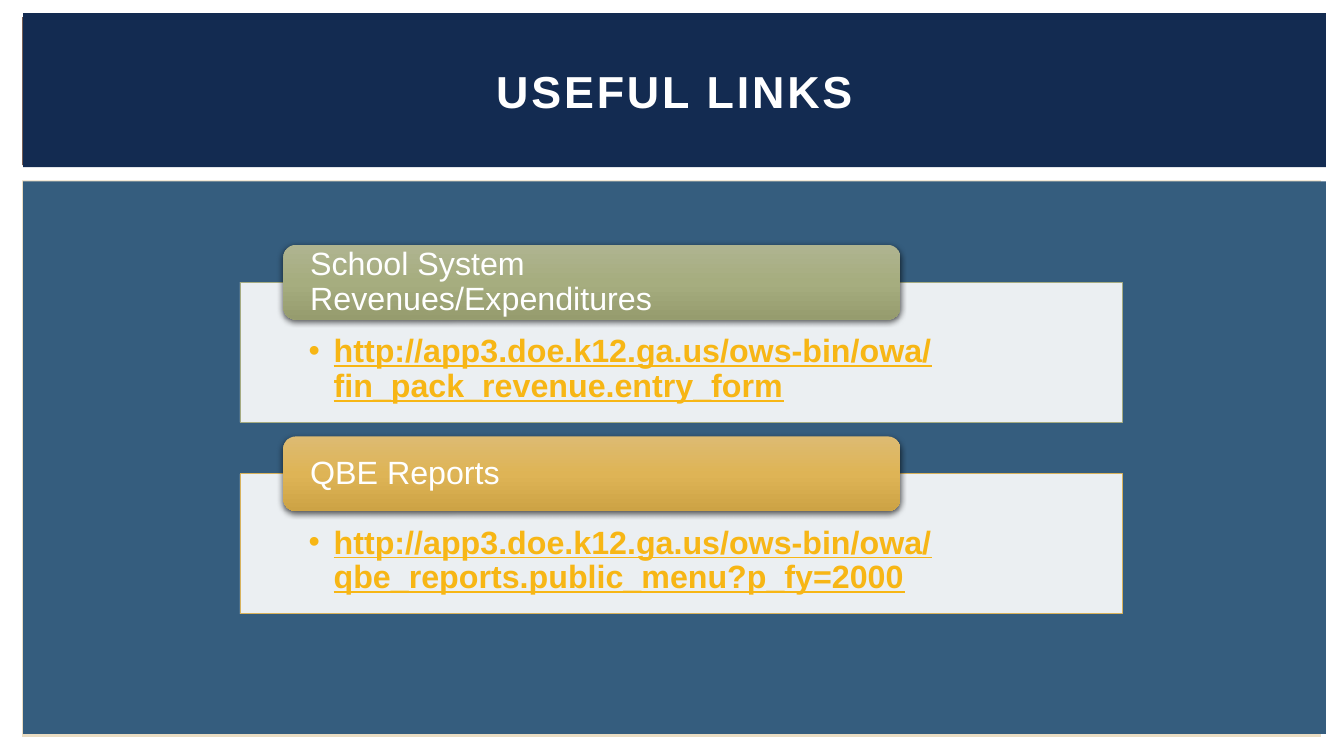
from lxml import etree
from pptx import Presentation
from pptx.dml.color import RGBColor
from pptx.enum import shapes, text
from pptx.oxml import ns
from pptx.util import Inches, Pt

WHITE = RGBColor(0xFF, 0xFF, 0xFF)
NAVY = RGBColor(0x13, 0x2B, 0x51)
BLUE = RGBColor(0x35, 0x5D, 0x7E)
SAND = RGBColor(0xEB, 0xDD, 0xC3)
BROWN = RGBColor(0x77, 0x5F, 0x55)
GOLD = RGBColor(0xF7, 0xB6, 0x15)
OLIVE_LINE = RGBColor(0xA5, 0xAB, 0x81)
AMBER_LINE = RGBColor(0xD8, 0xB2, 0x5C)
OLIVE_GRADIENT = ("AFB490", "A6AD7F", "969C6E")
AMBER_GRADIENT = ("DDBB72", "DEB456", "CDA345")

TITLE = "USEFUL LINKS"
LINKS = [
    ("School System Revenues/Expenditures",
     "http://app3.doe.k12.ga.us/ows-bin/owa/fin_pack_revenue.entry_form",
     OLIVE_LINE, OLIVE_GRADIENT),
    ("QBE Reports",
     "http://app3.doe.k12.ga.us/ows-bin/owa/qbe_reports.public_menu?p_fy=2000",
     AMBER_LINE, AMBER_GRADIENT),
]
BACK_PANELS = [
    ((0.22, 1.79, 12.88, 5.52), SAND),
    ((0.22, 0.17, 12.85, 1.47), BROWN),
    ((0.23, 1.8, 12.92, 5.48), BLUE),
]
TITLE_BAND = (0.23, 0.13, 12.92, 1.53)
FIRST_TAB_TOP, LINK_STEP = 2.43, 1.9
TAB_LEFT, TAB_WIDTH, TAB_HEIGHT = 2.81, 6.12, 0.74
BOX_LEFT, BOX_WIDTH, BOX_HEIGHT = 2.38, 8.75, 1.39
BOX_DROP = TAB_HEIGHT / 2


def add_xml(parent, tag, **attributes):
    return etree.SubElement(parent, ns.qn(tag), attributes)


def add_block(slide, place, fill=None, line=None,
              kind=shapes.MSO_SHAPE.RECTANGLE):
    shape = slide.shapes.add_shape(kind, *map(Inches, place))
    shape.shadow.inherit = False
    if fill is not None:
        shape.fill.solid()
        shape.fill.fore_color.rgb = fill
    if line is None:
        shape.line.fill.background()
    else:
        shape.line.color.rgb = line
        shape.line.width = Pt(0.5)
    return shape


def write(shape, words, size=23, color=WHITE, bold=False, underline=False,
          align=text.PP_ALIGN.LEFT, anchor=text.MSO_ANCHOR.MIDDLE,
          insets=(0.1, 0.05, 0.1, 0.05), line_spacing=0.9,
          tracking=None, bullet=False):
    frame = shape.text_frame
    frame.word_wrap = True
    frame.vertical_anchor = anchor
    (frame.margin_left, frame.margin_top,
     frame.margin_right, frame.margin_bottom) = map(Inches, insets)
    paragraph = frame.paragraphs[0]
    paragraph.alignment = align
    paragraph.line_spacing = line_spacing
    run = paragraph.add_run()
    run.text = words
    font = run.font
    font.name, font.size, font.bold = "Arial", Pt(size), bold
    font.underline = underline
    font.color.rgb = color
    if tracking:
        run._r.get_or_add_rPr().set("spc", str(tracking * 100))
    if bullet:
        properties = paragraph._p.get_or_add_pPr()
        properties.set("marL", str(Inches(0.25)))
        properties.set("indent", str(-Inches(0.25)))
        add_xml(properties, "a:buFont", typeface="Arial")
        add_xml(properties, "a:buChar", char="•")


def set_opacity(shape, percent):
    color = shape.fill._xPr.find(".//" + ns.qn("a:srgbClr"))
    add_xml(color, "a:alpha", val=str(percent * 1000))


def set_gradient(shape, colors):
    """Fill from top to bottom with evenly spaced stops."""
    gradient = etree.Element(ns.qn("a:gradFill"), rotWithShape="1")
    stops = add_xml(gradient, "a:gsLst")
    for index, color in enumerate(colors):
        position = index * 100000 // (len(colors) - 1)
        stop = add_xml(stops, "a:gs", pos=str(position))
        add_xml(stop, "a:srgbClr", val=color)
    add_xml(gradient, "a:lin", ang="5400000", scaled="0")
    shape._element.spPr.find(ns.qn("a:prstGeom")).addnext(gradient)


def set_shadow(shape):
    effects = shape._element.spPr.find(ns.qn("a:effectLst"))
    shadow = add_xml(effects, "a:outerShdw", blurRad=str(Pt(4.5)),
                     dist=str(Pt(1.5)), dir="5400000", rotWithShape="0")
    color = add_xml(shadow, "a:srgbClr", val="000000")
    add_xml(color, "a:alpha", val="63000")


def add_link(slide, top, heading, address, line, gradient):
    box = add_block(slide, (BOX_LEFT, top + BOX_DROP, BOX_WIDTH, BOX_HEIGHT),
                    WHITE, line)
    set_opacity(box, 90)
    write(box, address, color=GOLD, bold=True, underline=True, bullet=True,
          anchor=text.MSO_ANCHOR.TOP, insets=(0.68, 0.52, 0.68, 0.18))
    tab = add_block(slide, (TAB_LEFT, top, TAB_WIDTH, TAB_HEIGHT),
                    kind=shapes.MSO_SHAPE.ROUNDED_RECTANGLE)
    set_gradient(tab, gradient)
    set_shadow(tab)
    write(tab, heading, insets=(0.23, 0, 0.23, 0))


def main():
    presentation = Presentation()
    presentation.slide_width = Inches(13.33)
    presentation.slide_height = Inches(7.5)
    slide = presentation.slides.add_slide(presentation.slide_layouts[6])
    for place, color in BACK_PANELS:
        add_block(slide, place, color)
    write(add_block(slide, TITLE_BAND, NAVY), TITLE, size=32, bold=True,
          align=text.PP_ALIGN.CENTER, line_spacing=1.0, tracking=2)
    for index, link in enumerate(LINKS):
        add_link(slide, FIRST_TAB_TOP + index * LINK_STEP, *link)
    presentation.save("out.pptx")


if __name__ == "__main__":
    main()
